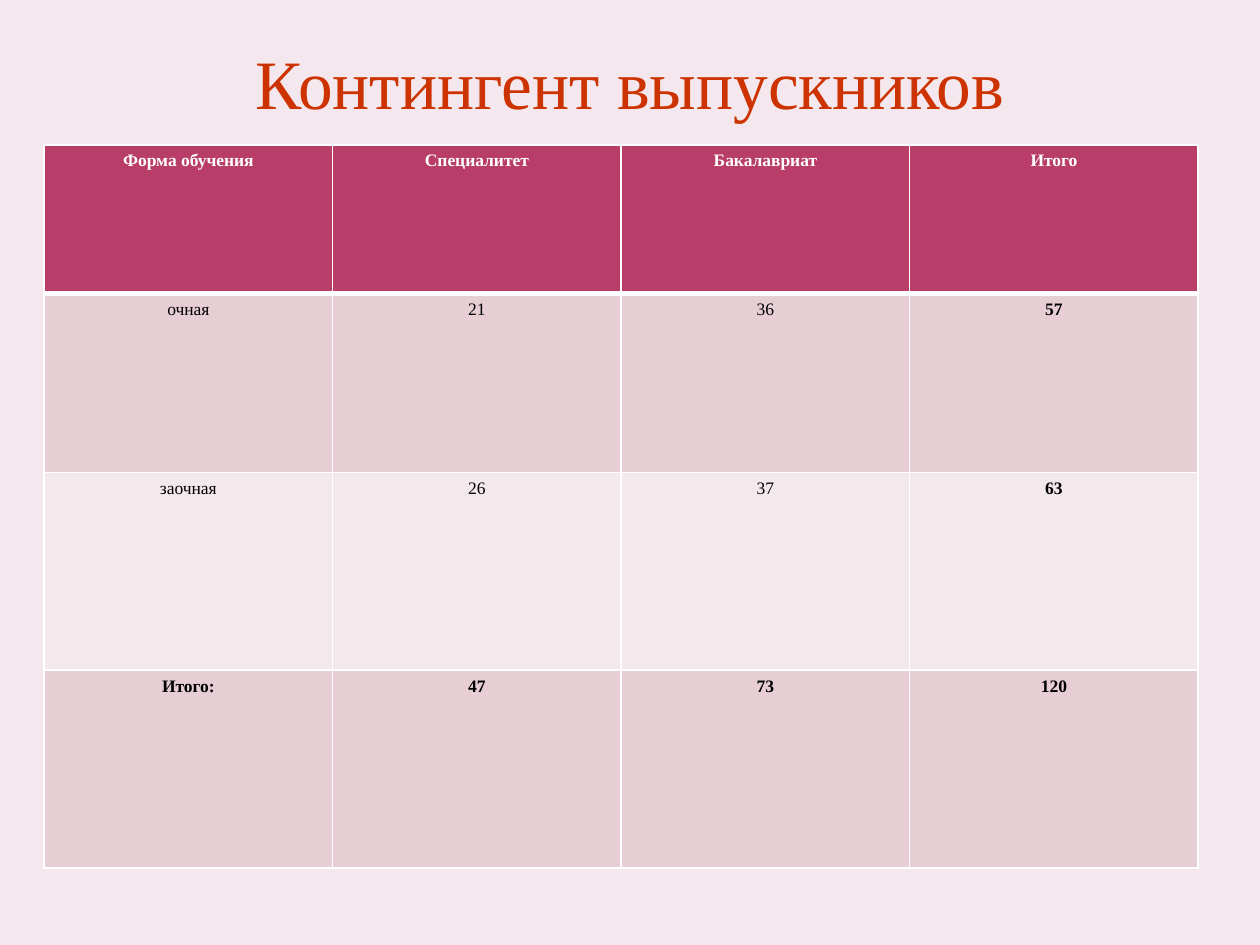
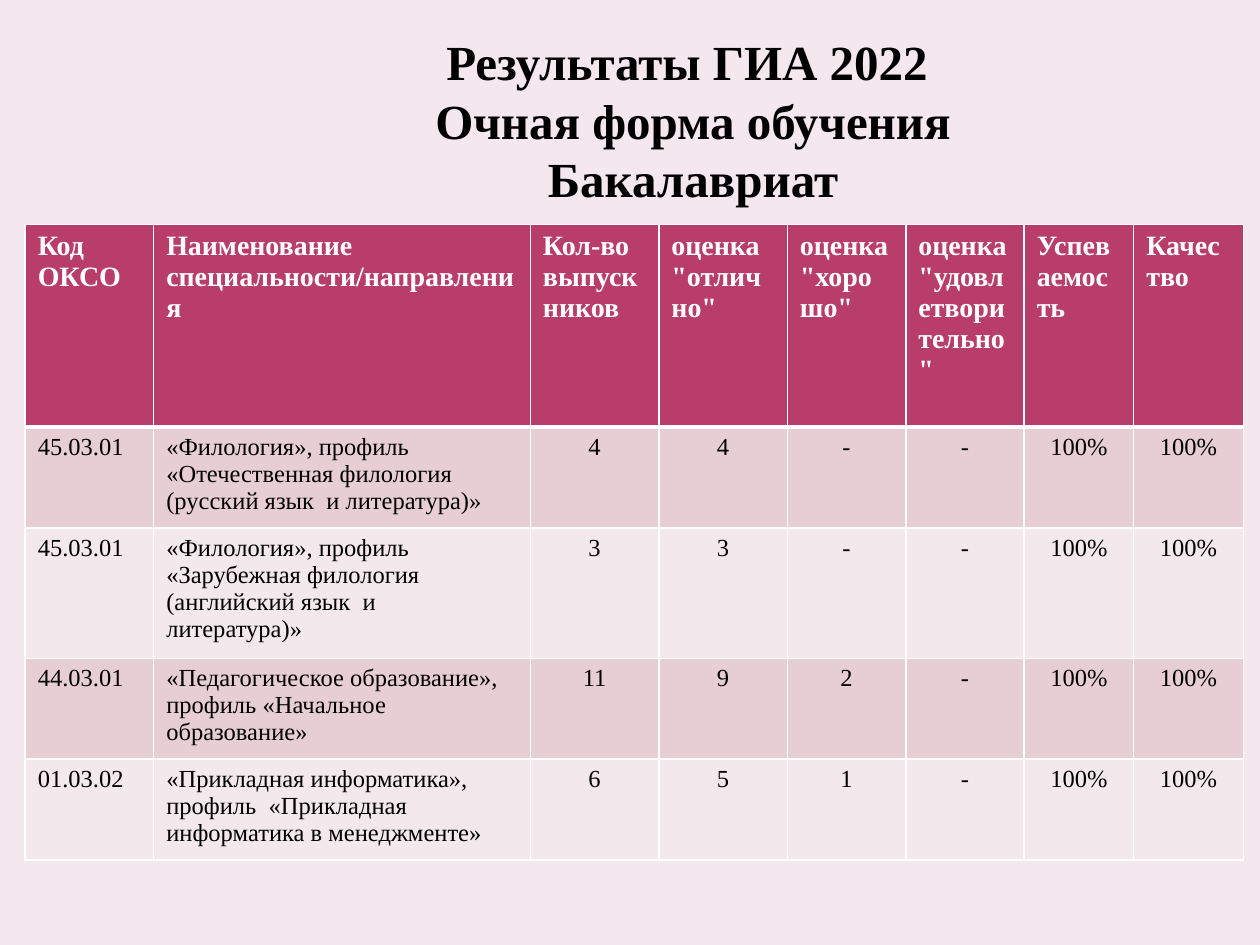
import pptx
import pptx.util
import pptx.dml.color
import pptx.enum.text
import pptx.oxml
import pptx.oxml.ns
from lxml import etree

Inches = pptx.util.Inches
Pt = pptx.util.Pt
ALIGN = pptx.enum.text.PP_ALIGN
ANCHOR = pptx.enum.text.MSO_ANCHOR

# Shared look
FONT = "Times New Roman"
BACK = "F4E7ED"
HEAD = "B83D68"
BANDS = ["E6CED4", "F3E8EB"]
WHITE = "FFFFFF"
BLACK = "000000"
RED = "CC3300"

GRADUATES = [
    ["Форма обучения", "Специалитет", "Бакалавриат", "Итого"],
    ["очная", "21", "36", "57"],
    ["заочная", "26", "37", "63"],
    ["Итого:", "47", "73", "120"],
]

RESULTS = [
    ["Код ОКСО", "Наименование специальности/направления", "Кол-во выпускников",
     'оценка "отлично"', 'оценка "хорошо"', 'оценка "удовлетворительно"',
     "Успеваемость", "Качество"],
    ["45.03.01", "«Филология», профиль «Отечественная филология (русский язык  и литература)»",
     "4", "4", "-", "-", "100%", "100%"],
    ["45.03.01", "«Филология», профиль «Зарубежная филология (английский язык  и литература)»",
     "3", "3", "-", "-", "100%", "100%"],
    ["44.03.01", "«Педагогическое образование», профиль «Начальное образование»",
     "11", "9", "2", "-", "100%", "100%"],
    ["01.03.02", "«Прикладная информатика», профиль  «Прикладная информатика в менеджменте»",
     "6", "5", "1", "-", "100%", "100%"],
]


def color(code):
    return pptx.dml.color.RGBColor.from_string(code)


def style(par, size, code, bold, align):
    par.alignment = align
    font = par.font
    font.name = FONT
    font.size = Pt(size)
    font.bold = bold
    font.color.rgb = color(code)


def add_slide(deck):
    slide = deck.slides.add_slide(deck.slide_layouts[6])
    fill = slide.background.fill
    fill.solid()
    fill.fore_color.rgb = color(BACK)
    return slide


def add_title(slide, box, text, size, code, bold=False, anchor=ANCHOR.MIDDLE, pitch=None):
    frame = slide.shapes.add_textbox(*map(Inches, box)).text_frame
    frame.word_wrap = True
    frame.margin_top = frame.margin_bottom = 0
    frame.vertical_anchor = anchor
    par = frame.paragraphs[0]
    par.text = text
    style(par, size, code, bold, ALIGN.CENTER)
    if pitch:
        par.line_spacing = Pt(pitch)


def add_edge(cell, side, width):
    props = cell._tc.get_or_add_tcPr()
    line = etree.SubElement(props, pptx.oxml.ns.qn("a:ln" + side), w=str(Pt(width)))
    fill = etree.SubElement(line, pptx.oxml.ns.qn("a:solidFill"))
    etree.SubElement(fill, pptx.oxml.ns.qn("a:srgbClr"), val=WHITE)


def add_grid(slide, left, top, widths, heights, rows, look):
    """Banded table; look(row, col) gives size, bold and alignment."""
    grid = slide.shapes.add_table(
        len(rows), len(widths), Inches(left), Inches(top),
        Inches(sum(widths)), Inches(sum(heights))).table
    for col, width in zip(grid.columns, widths):
        col.width = Inches(width)
    for row, height in zip(grid.rows, heights):
        row.height = Inches(height)
    for r, row in enumerate(rows):
        for c, text in enumerate(row):
            cell = grid.cell(r, c)
            # Thick rule under the header, thin ones elsewhere
            for side in "LRTB":
                thick = (r, side) in [(0, "B"), (1, "T")]
                add_edge(cell, side, 3 if thick else 1)
            cell.fill.solid()
            cell.fill.fore_color.rgb = color(BANDS[(r - 1) % 2] if r else HEAD)
            par = cell.text_frame.paragraphs[0]
            par.text = text
            size, bold, align = look(r, c)
            style(par, size, BLACK if r else WHITE, bold, align)


def total_look(row, col):
    return 10, row in (0, 3) or col == 3, ALIGN.CENTER


def result_look(row, col):
    if row == 0:
        return 16, True, ALIGN.LEFT
    return 14, False, ALIGN.LEFT if col < 2 else ALIGN.CENTER


def main():
    deck = pptx.Presentation()
    deck.slide_width = Inches(10)
    deck.slide_height = Inches(7.5)

    # Graduates by form of study
    slide = add_slide(deck)
    add_title(slide, (0.5, 0.32, 9, 1.25), "Контингент выпускников", 39.6, RED,
              anchor=ANCHOR.TOP)
    add_grid(slide, 0.35, 1.15, [2.29] * 4, [1.18, 1.42, 1.57, 1.57],
             GRADUATES, total_look)

    # Exam results
    slide = add_slide(deck)
    add_title(slide, (1, 0.36, 9, 1.18),
              "Результаты ГИА 2022 \vОчная форма обучения\vБакалавриат",
              28, BLACK, bold=True, pitch=33.4)
    add_grid(slide, 0.2, 1.78, [1.02, 2.99, 1.02, 1.02, 0.94, 0.94, 0.87, 0.87],
             [1.61, 0.74, 0.96, 0.75, 0.74], RESULTS, result_look)

    deck.save("out.pptx")


if __name__ == "__main__":
    main()
